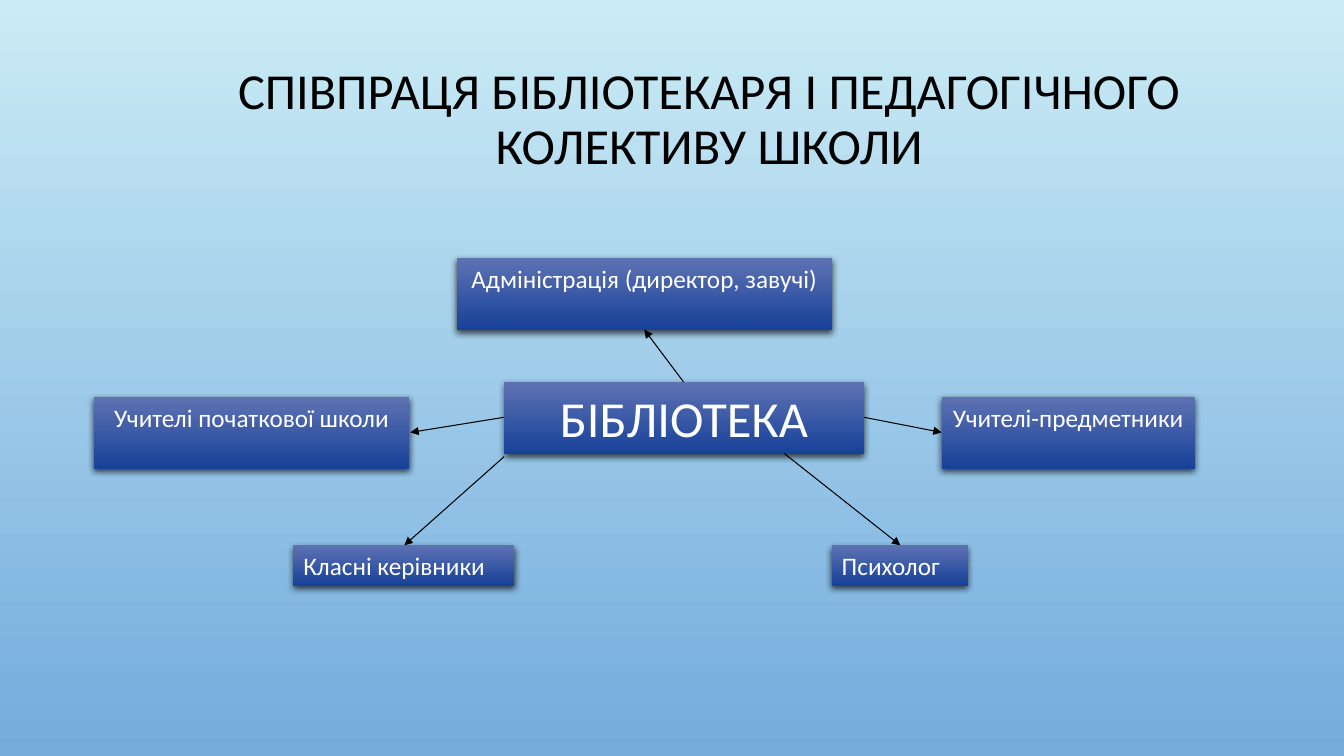
"""Builds a slide on how the school library works with the teaching staff."""
import pptx
import pptx.util
import pptx.dml.color
import pptx.enum.shapes
import pptx.enum.text
import pptx.oxml
import pptx.oxml.ns

Inches = pptx.util.Inches
Pt = pptx.util.Pt
Align = pptx.enum.text.PP_ALIGN
Anchor = pptx.enum.text.MSO_ANCHOR
NS = pptx.oxml.ns.nsdecls("a")


def color(code):
    return pptx.dml.color.RGBColor.from_string(code)


def write(shape, text, size, code, align, anchor):
    frame = shape.text_frame
    frame.word_wrap = True
    frame.vertical_anchor = anchor
    para = frame.paragraphs[0]
    para.alignment = align
    run = para.add_run()
    run.text = text
    run.font.size = Pt(size)
    run.font.name = "Calibri"
    run.font.color.rgb = color(code)
    return para


deck = pptx.Presentation()
deck.slide_width = Inches(13.33)
deck.slide_height = Inches(7.5)
slide = deck.slides.add_slide(deck.slide_layouts[6])
fills = [(slide.background.fill, "CBECF5", "73ABDD")]

title = slide.shapes.add_textbox(Inches(1.37), Inches(0.55), Inches(11.33), Inches(1.29))
para = write(title, "СПІВПРАЦЯ БІБЛІОТЕКАРЯ І ПЕДАГОГІЧНОГО КОЛЕКТИВУ ШКОЛИ",
             36, "000000", Align.CENTER, Anchor.MIDDLE)
para.line_spacing = 0.9

boxes = [
    ("БІБЛІОТЕКА", 5, 3.79, 3.57, 0.71, 36, Align.CENTER),
    ("Адміністрація (директор, завучі)", 4.53, 2.56, 3.72, 0.71, 18, Align.CENTER),
    ("Учителі-предметники", 9.34, 3.94, 2.51, 0.71, 18, Align.CENTER),
    ("Психолог", 8.25, 5.41, 1.35, 0.4, 18, Align.LEFT),
    ("Класні керівники", 2.91, 5.41, 2.19, 0.4, 18, Align.LEFT),
    ("Учителі початкової школи", 0.93, 3.94, 3.13, 0.71, 18, Align.CENTER),
]
for text, left, top, width, height, size, align in boxes:
    box = slide.shapes.add_shape(pptx.enum.shapes.MSO_SHAPE.RECTANGLE,
                                 Inches(left), Inches(top), Inches(width), Inches(height))
    fills.append((box.fill, "5E72B3", "174199"))
    box.line.fill.background()
    box.shadow.inherit = False
    glow = box._element.spPr.find(pptx.oxml.ns.qn("a:effectLst"))
    glow.append(pptx.oxml.parse_xml(
        f'<a:outerShdw {NS} blurRad="{Pt(5)}" dist="{Pt(2)}" dir="5400000" rotWithShape="0">'
        '<a:srgbClr val="000000"><a:alpha val="69000"/></a:srgbClr></a:outerShdw>'))
    write(box, text, size, "FFFFFF", align, Anchor.TOP)

for fill, first, last in fills:
    fill.gradient()
    fill.gradient_angle = 270
    for stop, code in zip(fill.gradient_stops, (first, last)):
        stop.color.rgb = color(code)

arrows = [
    (5, 4.14, 4.07, 4.29),
    (6.78, 3.79, 6.39, 3.27),
    (8.57, 4.14, 9.34, 4.29),
    (7.78, 4.5, 8.93, 5.41),
    (5, 4.53, 4.01, 5.41),
]
for ends in arrows:
    arrow = slide.shapes.add_connector(pptx.enum.shapes.MSO_CONNECTOR.STRAIGHT,
                                       *[Inches(end) for end in ends])
    arrow.line.color.rgb = color("000000")
    arrow.line.width = Pt(0.75)
    arrow.line._get_or_add_ln().append(
        pptx.oxml.parse_xml(f'<a:tailEnd {NS} type="triangle"/>'))
    arrow._element.spPr.append(pptx.oxml.parse_xml(f"<a:effectLst {NS}/>"))

deck.save("out.pptx")
